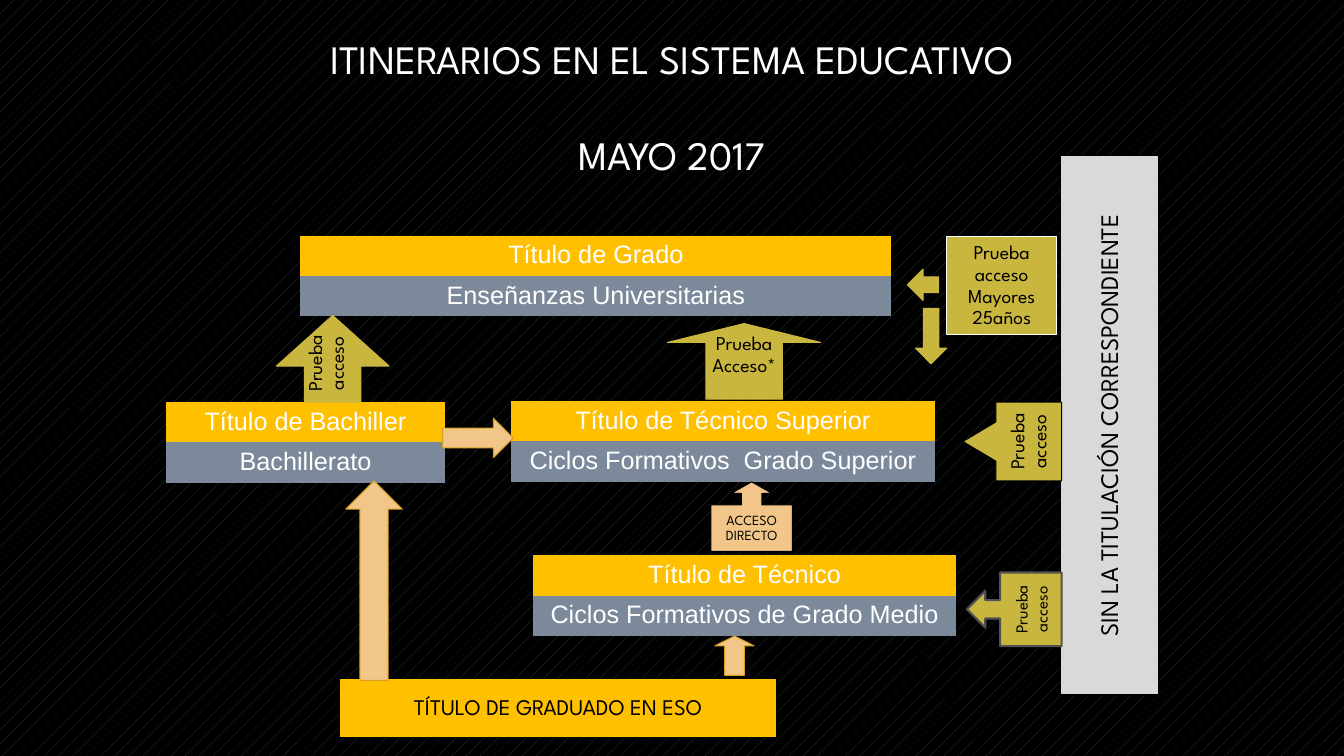
from pptx import Presentation
from pptx.dml.color import RGBColor
from pptx.enum.dml import MSO_PATTERN
from pptx.enum.shapes import MSO_SHAPE as Preset
from pptx.enum.text import MSO_ANCHOR as Anchor, PP_ALIGN as Align
from pptx.util import Inches, Pt

BLACK = RGBColor(0x00, 0x00, 0x00)
WHITE = RGBColor(0xFF, 0xFF, 0xFF)
HATCH = RGBColor(0x36, 0x3D, 0x46)
AMBER = RGBColor(0xFF, 0xC0, 0x00)
SLATE = RGBColor(0x7C, 0x89, 0x9A)
OLIVE = RGBColor(0xC9, 0xB6, 0x3F)
PEACH = RGBColor(0xF2, 0xC6, 0x88)
OCHRE = RGBColor(0xD5, 0x9F, 0x20)
SILVER = RGBColor(0xD9, 0xD9, 0xD9)
GRAPHITE = RGBColor(0x52, 0x52, 0x52)

PLAIN_TABLE = "{2D5ABB26-0587-4C30-8999-92F81FD0307C}"


class Diagram:
    font = "League Spartan"
    table_font = "Arial"
    spacing = 0.93

    def __init__(self, page):
        self.page = page
        fill = page.background.fill
        fill.patterned()
        fill.pattern = MSO_PATTERN.PERCENT_5
        fill.fore_color.rgb = HATCH
        fill.back_color.rgb = BLACK

    def typeset(self, frame, text, size, color=BLACK, font=None, spacing=None):
        frame.text = text
        for para in frame.paragraphs:
            para.alignment = Align.CENTER
            para.line_spacing = spacing or self.spacing
            for span in para.runs:
                span.font.size = Pt(size)
                span.font.name = font or self.font
                span.font.color.rgb = color

    def title(self, place, text, size):
        box = self.page.shapes.add_textbox(*map(Inches, place))
        frame = box.text_frame
        frame.word_wrap = True
        frame.vertical_anchor = Anchor.MIDDLE
        self.typeset(frame, text, size, WHITE, spacing=1.0)
        for para in frame.paragraphs[1:]:
            para.space_before = Pt(1.2 * size)

    def shape(self, preset, place, fill, line, weight=0.75, adjust=(), turn=0):
        box = self.page.shapes.add_shape(preset, *map(Inches, place))
        box.shadow.inherit = False
        box.fill.solid()
        box.fill.fore_color.rgb = fill
        box.line.color.rgb = line
        box.line.width = Pt(weight)
        box.rotation = turn
        for index, value in enumerate(adjust):
            box.adjustments[index] = value
        return box

    def label(self, box, text, size, insets=(0.1, 0.05, 0.1, 0.05),
              anchor=Anchor.MIDDLE, wrap=False, upward=False, spacing=None):
        frame = box.text_frame
        frame.word_wrap = wrap
        frame.vertical_anchor = anchor
        (frame.margin_left, frame.margin_top,
         frame.margin_right, frame.margin_bottom) = map(Inches, insets)
        if upward:
            frame._txBody.bodyPr.set("vert", "vert270")
        self.typeset(frame, text, size, spacing=spacing)

    def level(self, left, top, width, degree, studies, first_row=0.38):
        heights = (first_row, 0.38)
        holder = self.page.shapes.add_table(
            2, 1, Inches(left), Inches(top), Inches(width), Inches(sum(heights)))
        table = holder.table
        table._tbl.tblPr[0].text = PLAIN_TABLE
        rows = zip(table.rows, heights, (degree, studies), (AMBER, SLATE))
        for row, height, text, color in rows:
            row.height = Inches(height)
            cell = row.cells[0]
            cell.fill.solid()
            cell.fill.fore_color.rgb = color
            cell.margin_top = Inches(0.07)
            cell.margin_bottom = Inches(0.05)
            self.typeset(cell.text_frame, text, 18, WHITE, self.table_font)


def main():
    deck = Presentation()
    deck.slide_width = Inches(13.33)
    deck.slide_height = Inches(7.5)
    diagram = Diagram(deck.slides.add_slide(deck.slide_layouts[6]))

    diagram.title((1.25, 0.47, 10.83, 1.17),
                  "ITINERARIOS EN EL SISTEMA EDUCATIVO\nMAYO 2017", 28.8)

    graduate = diagram.shape(Preset.RECTANGLE, (3.37, 6.73, 4.33, 0.59), AMBER, BLACK)
    diagram.label(graduate, "TÍTULO DE GRADUADO EN ESO", 16)

    diagram.level(5.07, 3.98, 4.2, "Título de Técnico Superior",
                  "Ciclos Formativos  Grado Superior")
    diagram.level(5.29, 5.51, 4.19, "Título de Técnico",
                  "Ciclos Formativos de Grado Medio")
    diagram.level(2.98, 2.34, 5.86, "Título de Grado",
                  "Enseñanzas Universitarias", first_row=0.4)

    direct = diagram.shape(Preset.UP_ARROW_CALLOUT, (7.05, 4.78, 0.81, 0.69),
                           PEACH, BLACK, adjust=(0.293, 0.293, 0.167, 0.667))
    diagram.label(direct, "ACCESO\nDIRECTO", 10)

    higher_exam = diagram.shape(Preset.UP_ARROW, (6.62, 3.21, 1.52, 0.75),
                                OLIVE, OLIVE, adjust=(0.5, 0.25))
    diagram.label(higher_exam, "Prueba\nAcceso*", 14, (0.1, 0, 0.1, 0), Anchor.TOP)

    untitled = diagram.shape(Preset.RECTANGLE, (8.33, 3.73, 5.35, 0.98),
                             SILVER, BLACK, turn=270)
    diagram.label(untitled, "SIN LA TITULACIÓN CORRESPONDIENTE", 18)

    diagram.level(1.65, 3.99, 2.76, "Título de Bachiller", "Bachillerato")

    superior_exam = diagram.shape(Preset.UP_ARROW_CALLOUT, (9.65, 3.89, 0.78, 0.98),
                                  OLIVE, BLACK, adjust=(0.5, 0.25, 0.419, 0.667),
                                  turn=270)
    diagram.label(superior_exam, "Prueba\nacceso", 14)

    school_exam = diagram.shape(Preset.UP_ARROW, (2.74, 3.13, 1.12, 0.86),
                                OLIVE, OLIVE, adjust=(0.5, 0.585))
    diagram.label(school_exam, "Prueba\nacceso", 14, (0, 0, 0, 0.16),
                  Anchor.TOP, upward=True)

    for preset, place, fill, line, adjust in (
        (Preset.UP_ARROW, (7.09, 6.31, 0.39, 0.39), PEACH, OCHRE, (0.5, 0.25)),
        (Preset.UP_ARROW, (3.43, 4.77, 0.56, 1.98), PEACH, OCHRE, ()),
        (Preset.RIGHT_ARROW, (4.39, 4.15, 0.7, 0.39), PEACH, OCHRE, ()),
        (Preset.LEFT_ARROW, (9, 2.67, 0.31, 0.31), OLIVE, OLIVE, ()),
        (Preset.DOWN_ARROW, (9.08, 3.06, 0.31, 0.55), OLIVE, OLIVE, ()),
    ):
        diagram.shape(preset, place, fill, line, adjust=adjust)

    adult_exam = diagram.shape(Preset.RECTANGLE, (9.39, 2.35, 1.09, 0.97), OLIVE, WHITE)
    diagram.label(adult_exam, "Prueba\nacceso\nMayores\n25años", 14,
                  anchor=Anchor.TOP, wrap=True)

    middle_exam = diagram.shape(Preset.LEFT_ARROW_CALLOUT, (9.59, 5.68, 0.94, 0.73),
                                OLIVE, GRAPHITE, weight=1.5)
    diagram.label(middle_exam, "Prueba\nacceso", 12, wrap=True, upward=True, spacing=1.0)

    deck.save("out.pptx")


if __name__ == "__main__":
    main()
